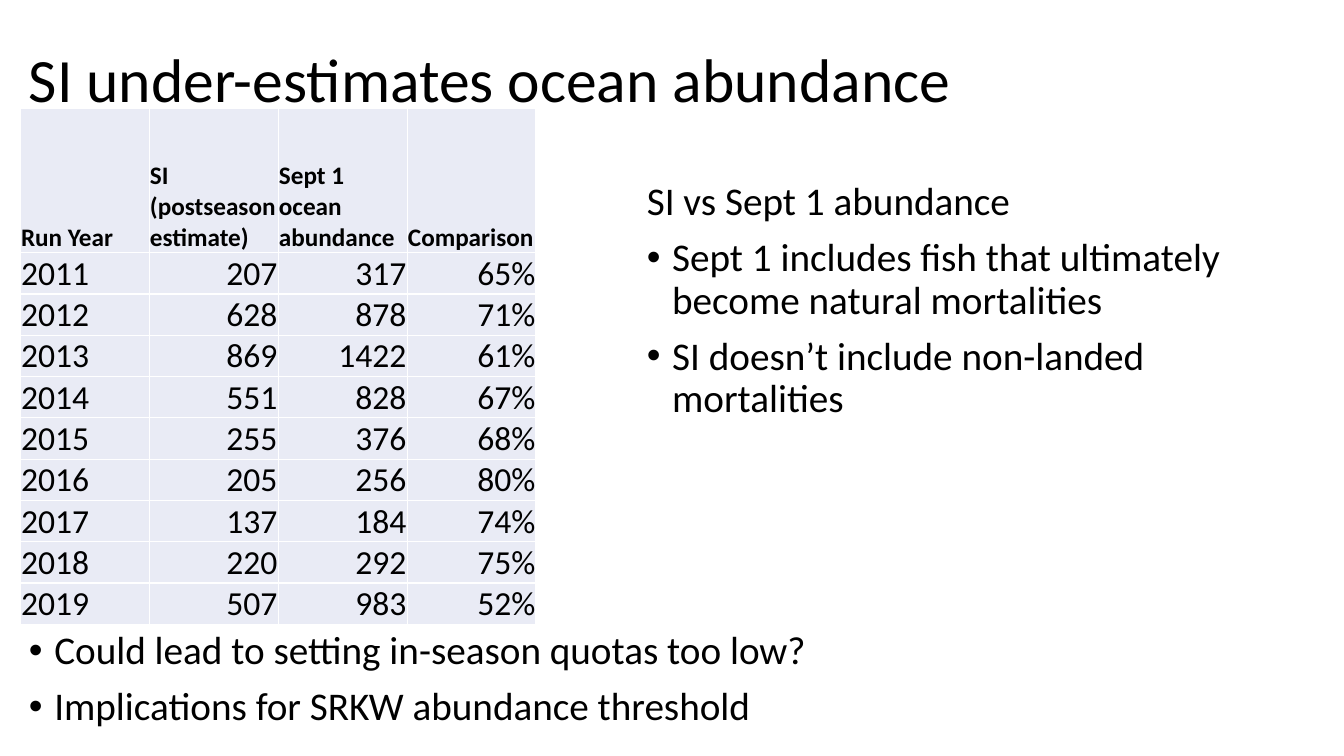
from lxml import etree
from pptx import Presentation
from pptx.dml.color import RGBColor
from pptx.enum.text import MSO_ANCHOR, PP_ALIGN
from pptx.oxml.ns import qn
from pptx.util import Cm, Pt

TOP, MIDDLE, BOTTOM = MSO_ANCHOR.TOP, MSO_ANCHOR.MIDDLE, MSO_ANCHOR.BOTTOM
LEFT, RIGHT = PP_ALIGN.LEFT, PP_ALIGN.RIGHT
BLACK = RGBColor(0x00, 0x00, 0x00)
WHITE = RGBColor(0xFF, 0xFF, 0xFF)
PALE = RGBColor(0xE9, 0xEB, 0xF5)

HEAD = ["Run Year", "SI\n(postseason estimate)", "Sept 1 ocean abundance",
        "Comparison"]
RUNS = [
    (2011, 207, 317, "65%"),
    (2012, 628, 878, "71%"),
    (2013, 869, 1422, "61%"),
    (2014, 551, 828, "67%"),
    (2015, 255, 376, "68%"),
    (2016, 205, 256, "80%"),
    (2017, 137, 184, "74%"),
    (2018, 220, 292, "75%"),
    (2019, 507, 983, "52%"),
]


class Deck:
    """Holds the text style and the current slide."""

    face = "Calibri"
    indent = Cm(0.64)

    def __init__(self):
        self.show = Presentation()
        self.show.slide_width = Cm(33.87)
        self.show.slide_height = Cm(19.05)
        self.slide = self.show.slides.add_slide(self.show.slide_layouts[6])

    def style(self, para, size, bold=False):
        font = para.font
        font.name, font.size, font.bold = self.face, Pt(size), bold
        font.color.rgb = BLACK

    def bullet(self, para):
        props = para._p.get_or_add_pPr()
        props.set("marL", str(self.indent))
        props.set("indent", str(-self.indent))
        etree.SubElement(props, qn("a:buFont"), typeface="Arial")
        etree.SubElement(props, qn("a:buChar"), char="•")

    def text(self, box, lines, size, anchor=TOP, gap=0, plain=0):
        """Add lines of text; all after the first `plain` ones get bullets."""
        frame = self.slide.shapes.add_textbox(*map(Cm, box)).text_frame
        frame.word_wrap = True
        frame.vertical_anchor = anchor
        frame.text = "\n".join(lines)
        for i, para in enumerate(frame.paragraphs):
            para.line_spacing = 0.9
            para.space_before = Pt(gap)
            if i >= plain:
                self.bullet(para)
            self.style(para, size)

    def border(self, cell):
        props = cell._tc.get_or_add_tcPr()
        for side in ("a:lnL", "a:lnR", "a:lnT", "a:lnB"):
            line = etree.SubElement(props, qn(side), w=str(Pt(1)))
            fill = etree.SubElement(line, qn("a:solidFill"))
            etree.SubElement(fill, qn("a:srgbClr"), val=str(WHITE))

    def cell(self, cell, text, size, bold, align):
        cell.margin_left = cell.margin_right = cell.margin_top = Cm(0.02)
        cell.margin_bottom = 0
        cell.vertical_anchor = BOTTOM
        self.border(cell)
        cell.fill.solid()
        cell.fill.fore_color.rgb = PALE
        cell.text = text
        for para in cell.text_frame.paragraphs:
            para.alignment = align
            self.style(para, size, bold)

    def table(self, box, head, rows, tall, low):
        data = [head, *rows]
        shape = self.slide.shapes.add_table(len(data), len(head),
                                            *map(Cm, box))
        grid = shape.table
        for r, row in enumerate(data):
            first = r == 0
            grid.rows[r].height = Cm(tall if first else low)
            for c, value in enumerate(row):
                self.cell(grid.cell(r, c), str(value), 18 if first else 24,
                          first, LEFT if first or c == 0 else RIGHT)


def main():
    deck = Deck()

    # Title
    deck.text((0.48, 0.25, 29.21, 3.68), ["SI under-estimates ocean abundance"],
              44, MIDDLE, plain=1)

    # Conclusions below the table
    deck.text((0.48, 15.77, 32.89, 3.02),
              ["Could lead to setting in-season quotas too low?",
               "Implications for SRKW abundance threshold"], 28, gap=10)

    # Yearly comparison
    deck.table((0.51, 2.72, 13, 13.06), HEAD, RUNS, 3.65, 1.04)

    # Explanation on the right
    deck.text((16.05, 4.45, 16.92, 10.85),
              ["SI vs Sept 1 abundance",
               "Sept 1 includes fish that ultimately become natural mortalities",
               "SI doesn’t include non-landed mortalities"],
              28, gap=10, plain=1)

    deck.show.save("out.pptx")


if __name__ == "__main__":
    main()
